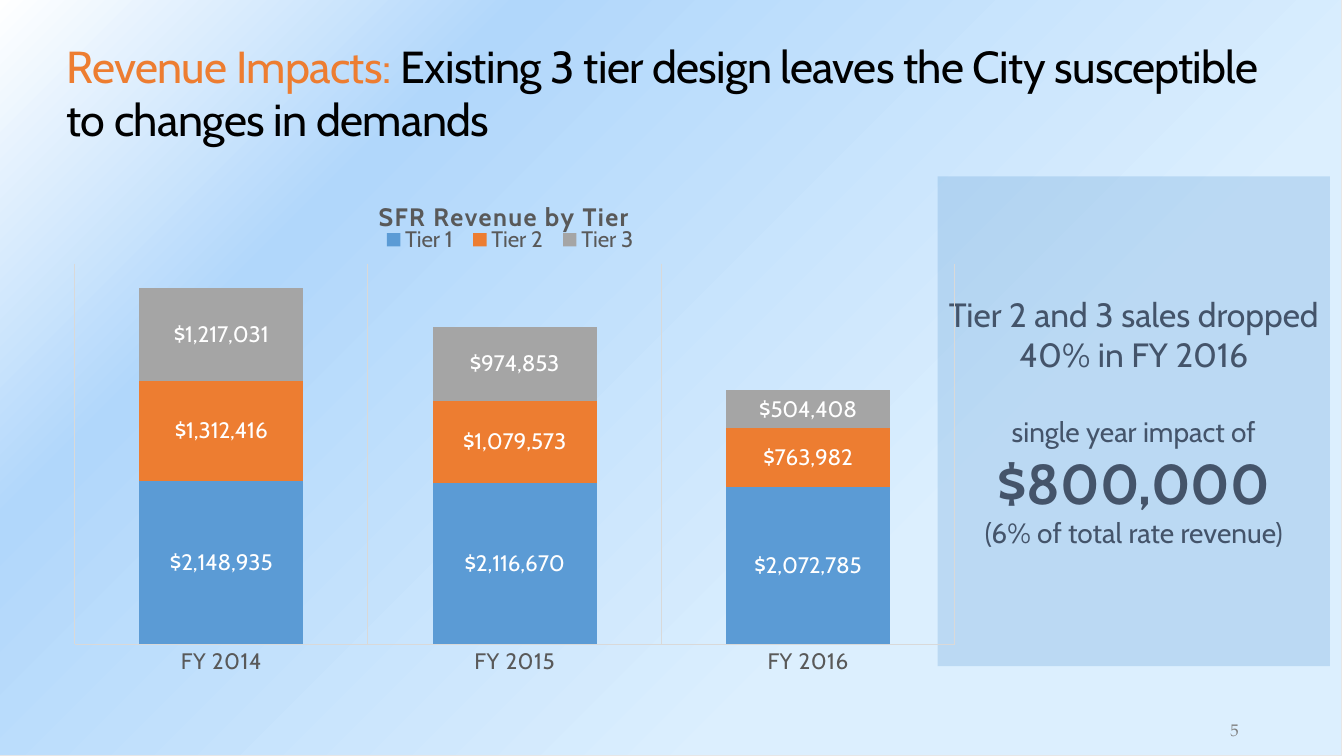
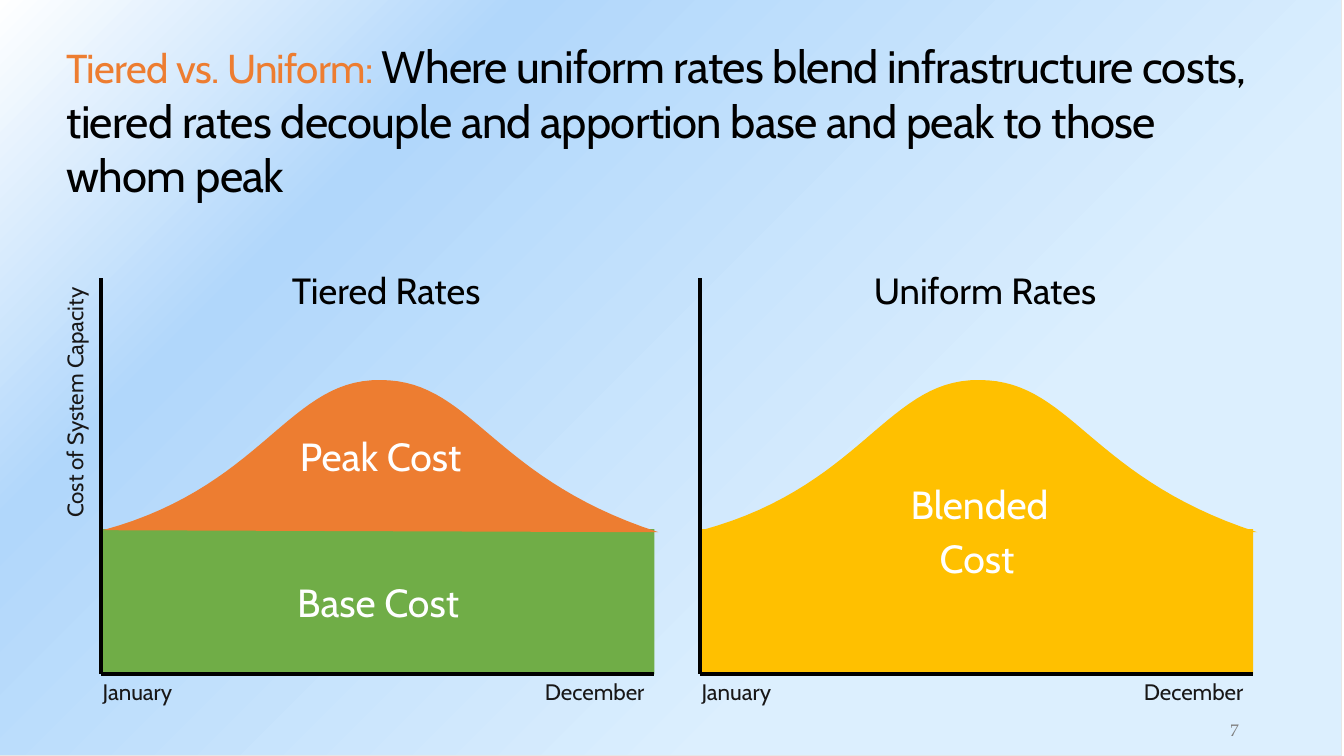
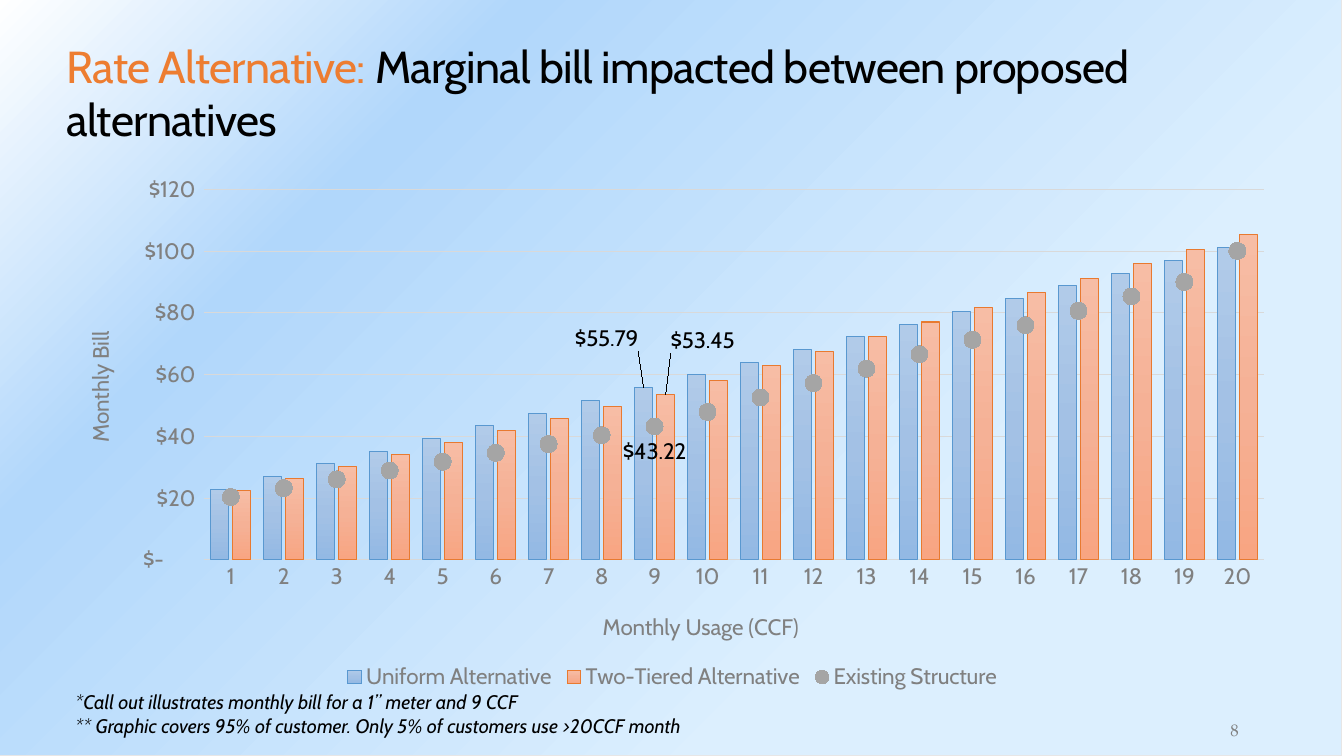
from pptx import Presentation
from pptx.chart.data import CategoryChartData
from pptx.dml.color import RGBColor
from pptx.enum.chart import (XL_CHART_TYPE, XL_LABEL_POSITION, XL_LEGEND_POSITION,
                             XL_MARKER_STYLE, XL_TICK_MARK)
from pptx.enum.shapes import MSO_CONNECTOR, MSO_SHAPE
from pptx.enum.text import MSO_ANCHOR, MSO_AUTO_SIZE, PP_ALIGN
from pptx.oxml import parse_xml
from pptx.oxml.ns import nsdecls, qn
from pptx.util import Inches, Pt

STACKED, CLUSTERED = XL_CHART_TYPE.COLUMN_STACKED, XL_CHART_TYPE.COLUMN_CLUSTERED
LEFT, CENTER, RIGHT = PP_ALIGN.LEFT, PP_ALIGN.CENTER, PP_ALIGN.RIGHT
TOP, MIDDLE, BOTTOM = MSO_ANCHOR.TOP, MSO_ANCHOR.MIDDLE, MSO_ANCHOR.BOTTOM
LEGEND_TOP, LEGEND_BOTTOM = XL_LEGEND_POSITION.TOP, XL_LEGEND_POSITION.BOTTOM
OUTSIDE, BELOW = XL_LABEL_POSITION.OUTSIDE_END, XL_LABEL_POSITION.BELOW
LABEL_CENTER = XL_LABEL_POSITION.CENTER
NO_TICK = XL_TICK_MARK.NONE
RECT, STRAIGHT = MSO_SHAPE.RECTANGLE, MSO_CONNECTOR.STRAIGHT


class Theme:
    font, number_font = "Cabin", "TeX Gyre Pagella"
    black, white, ink = "000000", "FFFFFF", "181717"
    blue, orange, grey = "5B9BD5", "ED7D31", "A5A5A5"
    green, gold, slate = "70AD47", "FFC000", "44546A"
    dark_grey, mid_grey, rule = "595959", "808080", "D9D9D9"
    edge = "E7E6E6"
    backdrop = [(30, "DCEFFE"), (75, "B1D7FB"), (100, "FFFFFF")]
    title, lead, area, heading = 32, 32, 28, 26
    chart_title, label, note, number = 18, 16, 14, 12


# Content
WIDTH, HEIGHT = 13.33, 7.5
TITLE_BOX = (0.56, 0.33, 12.22, 1.17)
NUMBER_BOX = (11.79, 7.09, 0.91, 0.3)
DOLLARS = '_("$"* #,##0_);_("$"* \\(#,##0\\);_("$"* "-"??_);_(@_)'
CENTS = '"$"#,##0.00'

REVENUE = {
    "number": 5,
    "lead": "Revenue Impacts: ",
    "title": "Existing 3 tier design leaves the City susceptible to changes in demands",
    "box": (0.56, 1.67, 9, 5.25),
    "chart_title": "SFR Revenue by Tier",
    "years": ["FY 2014", "FY 2015", "FY 2016"],
    "tiers": [("Tier 1", [2148935, 2116670, 2072785], Theme.blue),
              ("Tier 2", [1312416, 1079573, 763982], Theme.orange),
              ("Tier 3", [1217031, 974853, 504408], Theme.grey)],
    "impact_box": (9.3, 1.75, 3.89, 4.86),
    # text, size, bold, space before
    "impact": [("Tier 2 and 3 sales dropped 40% in FY 2016", 24, False, 0),
               ("single year impact of", 20, False, 29),
               ("$800,000", 40, True, 0),
               ("(6% of total rate revenue)", 20, False, 0)],
}

COSTS = {
    "number": 7,
    "lead": "Tiered vs. Uniform: ",
    "title": "Where uniform rates blend infrastructure costs, tiered rates decouple "
             "and apportion base and peak to those whom peak",
    "axis": "Cost of System Capacity",
    "months": ("January", "December"),
    # heading, (peak text, colour, anchor), (base text, colour, anchor)
    "panels": [("Tiered Rates", ("Peak Cost", Theme.orange, MIDDLE),
                ("Base Cost", Theme.green, MIDDLE)),
               ("Uniform Rates", ("Blended", Theme.gold, BOTTOM),
                ("Cost", Theme.gold, TOP))],
}
PANEL_LEFT, PANEL_STEP, PANEL_WIDTH = 1.0, 5.94, 5.48
AXIS_TOP, BASE_TOP, AXIS_BOTTOM = 2.76, 5.25, 6.69
# Bezier control points of the peak, measured from the panel's left edge
PEAK_CURVES = [((0.02, 5.26), (1.61, 4.83), (1.86, 3.76), (2.77, 3.77)),
               ((2.77, 3.77), (3.69, 3.77), (3.86, 4.74), (5.53, 5.28))]
CURVE_STEPS = 30

BILLS = {
    "number": 8,
    "lead": "Rate Alternative: ",
    "title": "Marginal bill impacted between proposed alternatives",
    "box": (0.56, 1.67, 12.22, 5.25),
    "usage": [str(ccf) for ccf in range(1, 21)],
    "series": [
        ("Uniform Alternative",
         [22.83, 26.95, 31.07, 35.19, 39.31, 43.43, 47.55, 51.67, 55.79, 59.91,
          64.03, 68.15, 72.27, 76.39, 80.51, 84.63, 88.75, 92.87, 96.99, 101.11]),
        ("Two-Tiered Alternative",
         [22.57, 26.43, 30.29, 34.15, 38.01, 41.87, 45.73, 49.59, 53.45, 58.17,
          62.89, 67.61, 72.33, 77.05, 81.77, 86.49, 91.21, 95.93, 100.65, 105.37]),
        ("Existing Structure",
         [20.34, 23.2, 26.06, 28.92, 31.78, 34.64, 37.5, 40.36, 43.22, 47.9,
          52.58, 57.26, 61.94, 66.62, 71.3, 75.98, 80.66, 85.34, 90.02, 100.08])],
    "columns": [([(0, "B1CBE9"), (50, "A3C1E5"), (100, "93B9E4")], "5998D0"),
                ([(0, "F7BDA5"), (50, "F5B196"), (100, "F8A582")], "E87A30")],
    "callout_point": 8,
    # fill, position, offset as shares of the chart
    "callouts": [("9DC3E6", OUTSIDE, (-0.03, -0.06)),
                 ("F8CBAD", OUTSIDE, (0.03, -0.07)),
                 ("C9C9C9", BELOW, None)],
    "notes_box": (0.65, 6.8, 7.61, 0.57),
    "notes": ["*Call out illustrates monthly bill for a 1” meter and 9 CCF",
              "** Graphic covers 95% of customer. Only 5% of customers use >20CCF month"],
}


# Text and shapes
def rgb(color):
    return RGBColor.from_string(color)


def inches(box):
    return [Inches(length) for length in box]


def style(font, size, color, bold=None, italic=None, name=Theme.font):
    font.name, font.size, font.bold, font.italic = name, Pt(size), bold, italic
    font.color.rgb = rgb(color)


def track(element, points):
    """Letter spacing for all text properties inside an element."""
    for props in element.iter(qn("a:rPr"), qn("a:defRPr")):
        props.set("spc", str(round(points * 100)))


def write(frame, lines, size, color, align=LEFT, anchor=TOP, **font):
    frame.word_wrap, frame.vertical_anchor = True, anchor
    for i, text in enumerate(lines):
        paragraph = frame.add_paragraph() if i else frame.paragraphs[0]
        paragraph.text, paragraph.alignment = text, align
        style(paragraph.font, size, color, **font)
    return frame


def add_text(slide, box, lines, size, color, **options):
    text_box = slide.shapes.add_textbox(*inches(box))
    write(text_box.text_frame, lines, size, color, **options)
    return text_box


def paint(shape, color):
    shape.shadow.inherit = False
    shape.fill.solid()
    shape.fill.fore_color.rgb = rgb(color)
    shape.line.fill.background()
    return shape


def set_gradient(fill, props, stops, direction):
    fill.gradient()
    stop_xml = "".join(f'<a:gs pos="{pos * 1000}"><a:srgbClr val="{color}"/></a:gs>'
                       for pos, color in stops)
    props.replace(props.find(qn("a:gradFill")), parse_xml(
        f'<a:gradFill {nsdecls("a")} rotWithShape="1"><a:gsLst>{stop_xml}</a:gsLst>'
        f'{direction}</a:gradFill>'))


def add_axis_line(slide, start, end):
    line = slide.shapes.add_connector(STRAIGHT, *inches(start + end))
    line.line.color.rgb, line.line.width = rgb(Theme.black), Pt(2.75)
    line.element.spPr.append(parse_xml(f'<a:effectLst {nsdecls("a")}/>'))


# Shared slide parts
def add_backdrop(slide, layout):
    """Draw the gradient once and keep it on the layout."""
    backdrop = slide.shapes.add_shape(RECT, *inches((-0.02, 0, WIDTH, HEIGHT)))
    backdrop.shadow.inherit = False
    set_gradient(backdrop.fill, backdrop.element.spPr, Theme.backdrop,
                 '<a:path path="circle"><a:fillToRect l="100000" t="100000"/></a:path>')
    backdrop.line.color.rgb, backdrop.line.width = rgb(Theme.edge), Pt(0.75)
    layout.shapes.element.insert(2, backdrop.element)


def add_slide(prs, layout, content, lead_size=Theme.lead, title_size=Theme.title):
    slide = prs.slides.add_slide(layout)
    title = slide.shapes.title
    title.left, title.top, title.width, title.height = inches(TITLE_BOX)
    frame = title.text_frame
    frame.word_wrap, frame.auto_size = True, MSO_AUTO_SIZE.NONE
    frame.vertical_anchor = TOP
    paragraph = frame.paragraphs[0]
    paragraph.alignment = LEFT
    for text, size, color in ((content["lead"], lead_size, Theme.orange),
                              (content["title"], title_size, Theme.black)):
        run = paragraph.add_run()
        run.text = text
        style(run.font, size, color)
    track(title.element, -0.5)
    number = add_text(slide, NUMBER_BOX, [str(content["number"])], Theme.number,
                      Theme.mid_grey, align=CENTER, anchor=BOTTOM,
                      name=Theme.number_font).text_frame
    number.margin_left = number.margin_right = Inches(0.05)
    return slide


# Chart parts
def place(part, x, y, w=None, h=None, inner=False, offset=False):
    """Manual layout, in shares of the chart; the plot area takes it first."""
    is_plot = part.tag == qn("c:plotArea")
    for old in part.findall(qn("c:layout")):
        part.remove(old)
    target = '<c:layoutTarget val="inner"/>' if inner else ""
    modes = "" if offset else '<c:xMode val="edge"/><c:yMode val="edge"/>'
    sizes = "".join(f'<c:{name} val="{value}"/>' for name, value in
                    (("x", x), ("y", y), ("w", w), ("h", h)) if value is not None)
    part.insert(0 if is_plot else 1, parse_xml(
        f'<c:layout {nsdecls("c")}><c:manualLayout>{target}{modes}{sizes}'
        '</c:manualLayout></c:layout>'))


def add_chart(slide, kind, box, categories, series, gap, overlap, text_color, legend):
    data = CategoryChartData()
    data.categories = categories
    for name, values in series:
        data.add_series(name, values)
    chart = slide.shapes.add_chart(kind, *inches(box), data).chart
    style(chart.font, Theme.label, Theme.black)
    clear = (f'<c:spPr {nsdecls("c", "a")}><a:noFill/><a:ln><a:noFill/></a:ln></c:spPr>')
    chart_part = chart.element.find(qn("c:chart"))
    chart_part.addnext(parse_xml(clear))
    chart_part.find(qn("c:plotArea")).append(parse_xml(clear))
    chart.has_title = False
    columns = chart.plots[0]
    columns.gap_width, columns.overlap = gap, overlap
    columns.vary_by_categories = False
    chart.has_legend = True
    chart.legend.position, chart.legend.include_in_layout = legend, False
    style(chart.legend.font, Theme.label, text_color)
    for axis in (chart.category_axis, chart.value_axis):
        axis.major_tick_mark = axis.minor_tick_mark = NO_TICK
        style(axis.tick_labels.font, Theme.label, text_color)
    rule(chart.category_axis.format.line)
    labels = chart.value_axis.tick_labels
    labels.number_format, labels.number_format_is_linked = DOLLARS, False
    return chart


def rule(line):
    line.color.rgb, line.width = rgb(Theme.rule), Pt(0.75)


def set_scale(axis, top, step):
    axis.minimum_scale, axis.maximum_scale, axis.major_unit = 0, top, step


def add_callout(series, point, fill, position, offset):
    series.data_labels.show_value = False
    label = series.points[point].data_label
    style(label.font, Theme.label, Theme.black)
    label.position = position
    part = series.data_labels._element.find(qn("c:dLbl"))
    part.insert(1, parse_xml(f'<c:spPr {nsdecls("c", "a")}><a:solidFill>'
                             f'<a:srgbClr val="{fill}"/></a:solidFill></c:spPr>'))
    number_format = parse_xml(f'<c:numFmt {nsdecls("c")} sourceLinked="0"/>')
    number_format.set("formatCode", CENTS)
    part.insert(1, number_format)
    if offset:
        place(part, *offset, offset=True)


def move_last_to_line(chart):
    """Turn the last column series into a line on the same axes."""
    bars = chart.element.find(".//" + qn("c:barChart"))
    last = bars.findall(qn("c:ser"))[-1]
    for flag in last.findall(qn("c:invertIfNegative")):
        last.remove(flag)
    axes = "".join(f'<c:axId val="{axis.get("val")}"/>'
                   for axis in bars.findall(qn("c:axId")))
    line = parse_xml(f'<c:lineChart {nsdecls("c")}><c:grouping val="standard"/>'
                     f'<c:varyColors val="0"/><c:marker val="1"/>{axes}</c:lineChart>')
    line.insert(2, last)
    bars.addnext(line)
    return chart.plots[1].series[0]


# Slides
def build_revenue(slide):
    panel = paint(slide.shapes.add_shape(RECT, *inches(REVENUE["impact_box"])), Theme.blue)
    panel.element.spPr.find(".//" + qn("a:srgbClr")).append(
        parse_xml(f'<a:alpha {nsdecls("a")} val="25000"/>'))
    frame = write(panel.text_frame, [line[0] for line in REVENUE["impact"]], 20,
                  Theme.slate, align=CENTER, anchor=MIDDLE)
    for paragraph, (_, size, bold, before) in zip(frame.paragraphs, REVENUE["impact"]):
        paragraph.font.size, paragraph.font.bold = Pt(size), bold
        paragraph.space_before = Pt(before)

    chart = add_chart(slide, STACKED, REVENUE["box"], REVENUE["years"],
                      [tier[:2] for tier in REVENUE["tiers"]], 79, 100,
                      Theme.dark_grey, LEGEND_TOP)
    chart.has_title = True
    heading = chart.chart_title.text_frame.paragraphs[0]
    run = heading.add_run()
    run.text = REVENUE["chart_title"]
    style(run.font, Theme.chart_title, Theme.dark_grey, bold=True)
    title_part = chart.element.find(".//" + qn("c:title"))
    track(title_part, 1)
    track(chart.category_axis.tick_labels._element, 0.5)
    place(title_part, 0.35, 0.05)
    place(chart.legend._element, 0.35, 0.11, 0.3, 0.05)
    place(chart.element.find(".//" + qn("c:plotArea")), 0.02, 0.18, 0.97, 0.72, inner=True)
    chart.category_axis.has_major_gridlines = True
    rule(chart.category_axis.major_gridlines.format.line)
    chart.value_axis.has_major_gridlines = False
    chart.value_axis.visible = False
    set_scale(chart.value_axis, 5000000, 1000000)
    for tier, (_, _, color) in zip(chart.plots[0].series, REVENUE["tiers"]):
        tier.format.fill.solid()
        tier.format.fill.fore_color.rgb = rgb(color)
        labels = tier.data_labels
        labels.show_value, labels.position = True, LABEL_CENTER
        labels.number_format, labels.number_format_is_linked = DOLLARS, False
        style(labels.font, Theme.label, Theme.white)


def peak_points(left):
    for p0, p1, p2, p3 in PEAK_CURVES:
        for step in range(CURVE_STEPS + 1):
            t = step / CURVE_STEPS
            x, y = ((1 - t) ** 3 * a + 3 * (1 - t) ** 2 * t * b
                    + 3 * (1 - t) * t ** 2 * c + t ** 3 * d
                    for a, b, c, d in zip(p0, p1, p2, p3))
            yield Inches(left + x), Inches(y)


def build_costs(slide):
    for i, (heading, peak, base) in enumerate(COSTS["panels"]):
        left = PANEL_LEFT + i * PANEL_STEP
        right = left + PANEL_WIDTH + 0.01
        base_area = slide.shapes.add_shape(
            RECT, *inches((left + 0.01, BASE_TOP, PANEL_WIDTH, AXIS_BOTTOM - BASE_TOP)))
        start, *rest = peak_points(left)
        outline = slide.shapes.build_freeform(*start)
        outline.add_line_segments(rest, close=True)
        for area, (text, color, anchor) in ((base_area, base),
                                            (outline.convert_to_shape(), peak)):
            paint(area, color)
            write(area.text_frame, [text], Theme.area, Theme.white,
                  align=CENTER, anchor=anchor)
        add_axis_line(slide, (left, AXIS_TOP), (left, AXIS_BOTTOM))
        add_axis_line(slide, (left, AXIS_BOTTOM), (right, AXIS_BOTTOM))
        first, last = COSTS["months"]
        add_text(slide, (left - 0.08, 6.68, 1.7, 0.37), [first], Theme.label, Theme.ink)
        add_text(slide, (right - 1.35, 6.68, 1.35, 0.37), [last], Theme.label,
                 Theme.ink, align=RIGHT)
        add_text(slide, (left + 0.09, 2.61, PANEL_WIDTH, 0.74), [heading],
                 Theme.heading, Theme.black, align=CENTER)
    axis_label = add_text(slide, (-0.56, 3.87, 2.6, 0.37), [COSTS["axis"]],
                          Theme.label, Theme.ink, align=RIGHT)
    axis_label.rotation = 270


def build_bills(slide):
    chart = add_chart(slide, CLUSTERED, BILLS["box"], BILLS["usage"], BILLS["series"],
                      75, -25, Theme.mid_grey, LEGEND_BOTTOM)
    existing = move_last_to_line(chart)
    place(chart.element.find(".//" + qn("c:plotArea")), 0.12, 0.04, 0.86, 0.7, inner=True)
    place(chart.legend._element, 0.23, 0.94, 0.54, 0.06)
    set_scale(chart.value_axis, 120, 20)
    chart.value_axis.format.line.fill.background()
    rule(chart.value_axis.major_gridlines.format.line)
    for axis, text, turn, spot in (
            (chart.category_axis, "Monthly Usage (CCF)", 0, (0.44, 0.83)),
            (chart.value_axis, "Monthly Bill", -90, (0.02, 0.3))):
        run = axis.axis_title.text_frame.paragraphs[0].add_run()
        run.text = text
        style(run.font, Theme.label, Theme.mid_grey, bold=False)
        title_part = axis.axis_title._element
        title_part.find(".//" + qn("a:bodyPr")).set("rot", str(turn * 60000))
        place(title_part, *spot)

    columns = list(chart.plots[0].series)
    for column, (stops, edge) in zip(columns, BILLS["columns"]):
        set_gradient(column.format.fill, column._element.find(qn("c:spPr")), stops,
                     '<a:lin ang="5400000" scaled="0"/>')
        column.format.line.color.rgb, column.format.line.width = rgb(edge), Pt(0.75)
    existing.smooth = False
    existing.format.line.fill.background()
    marker = existing.marker
    marker.style, marker.size = XL_MARKER_STYLE.CIRCLE, 12
    marker.format.fill.solid()
    marker.format.fill.fore_color.rgb = rgb(Theme.grey)
    marker.format.line.fill.background()
    for series, callout in zip(columns + [existing], BILLS["callouts"]):
        add_callout(series, BILLS["callout_point"], *callout)
    add_text(slide, BILLS["notes_box"], BILLS["notes"], Theme.note, Theme.black, italic=True)


def main():
    prs = Presentation()
    prs.slide_width, prs.slide_height = Inches(WIDTH), Inches(HEIGHT)
    layout = prs.slide_layouts[5]
    revenue = add_slide(prs, layout, REVENUE)
    add_backdrop(revenue, layout)
    build_revenue(revenue)
    build_costs(add_slide(prs, layout, COSTS, lead_size=28.8, title_size=32.4))
    build_bills(add_slide(prs, layout, BILLS))
    prs.save("out.pptx")


if __name__ == "__main__":
    main()
